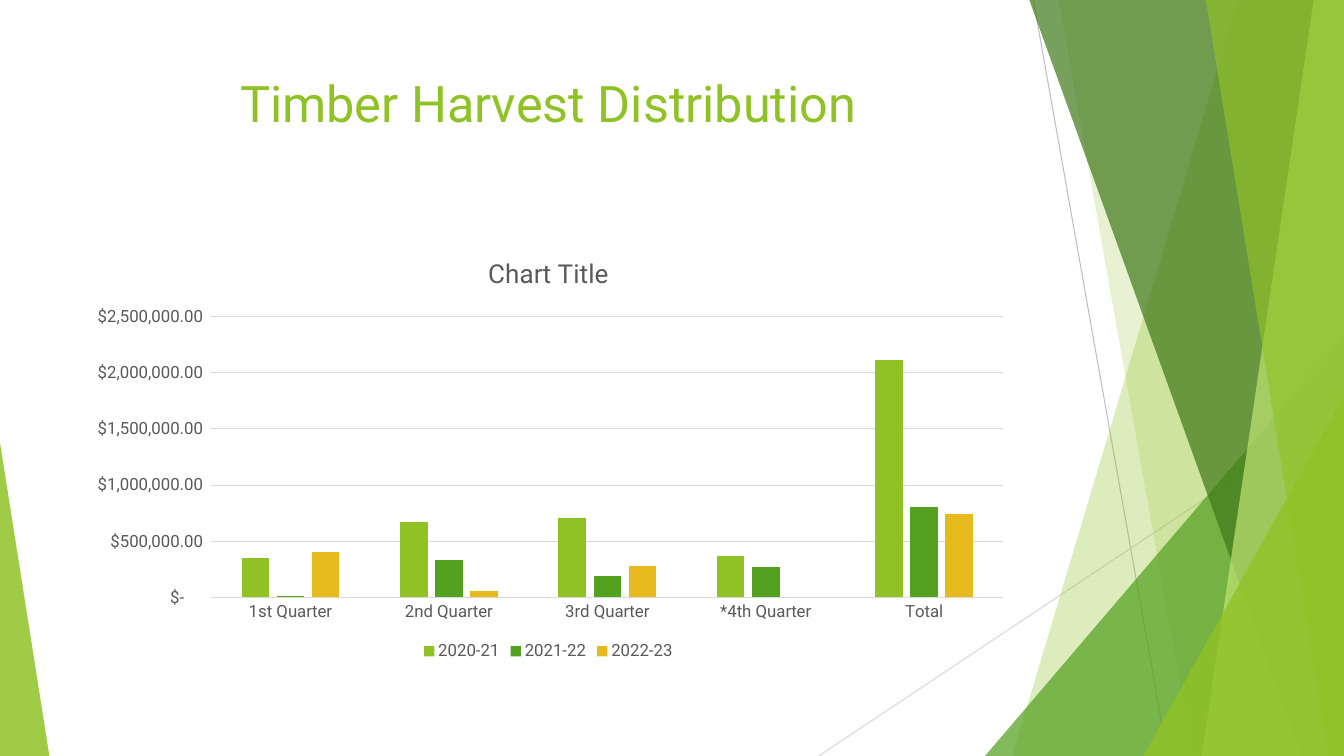
from collections import namedtuple

from lxml import etree
from pptx import Presentation
from pptx.chart.data import CategoryChartData
from pptx.dml.color import RGBColor
from pptx.enum.chart import XL_CHART_TYPE, XL_LEGEND_POSITION, XL_TICK_MARK
from pptx.enum.shapes import MSO_CONNECTOR, MSO_SHAPE
from pptx.enum.text import MSO_ANCHOR, PP_ALIGN
from pptx.oxml.ns import qn
from pptx.util import Inches, Pt

COLUMN_CHART = XL_CHART_TYPE.COLUMN_CLUSTERED
LEGEND_BOTTOM = XL_LEGEND_POSITION.BOTTOM
NO_TICK = XL_TICK_MARK.NONE
STRAIGHT = MSO_CONNECTOR.STRAIGHT
RIGHT_TRIANGLE = MSO_SHAPE.ISOSCELES_TRIANGLE
TOP = MSO_ANCHOR.TOP
CENTER = PP_ALIGN.CENTER

FONT = "Roboto"
COLORS = {
    "lime": "90C226",
    "green": "54A021",
    "gold": "E6B91E",
    "forest": "3F7819",
    "pale": "C0E474",
    "text": "595959",
    "grid": "D9D9D9",
    "ray": "BFBFBF",
}
DOLLARS = '_("$"* #,##0.00_);_("$"* \\(#,##0.00\\);_("$"* "-"??_);_(@_)'
QUARTERS = ["1st Quarter", "2nd Quarter", "3rd Quarter", "*4th Quarter", "Total"]
HARVESTS = [
    ("2020-21", "lime", [350000, 670000, 710000, 370000, 2110000]),
    ("2021-22", "green", [10000, 330000, 190000, 270000, 800000]),
    ("2022-23", "gold", [400000, 60000, 280000, None, 740000]),
]

Box = namedtuple("Box", "left top width height")


def color(name):
    return RGBColor.from_string(COLORS[name])


def point(box, across, down):
    return (
        int(box.left + box.width * across / 100),
        int(box.top + box.height * down / 100),
    )


def region(box, left, top, width, height):
    return Box(*point(box, left, top), *point(Box(0, 0, *box[2:]), width, height))


def paint(shape, name, opacity):
    shape.shadow.inherit = False
    shape.line.fill.background()
    shape.fill.solid()
    shape.fill.fore_color.rgb = color(name)
    tint = shape.fill._xPr.find(qn("a:solidFill"))[0]
    etree.SubElement(tint, qn("a:alpha")).set("val", str(opacity * 1000))


def add_ray(slide, box, start, end, name):
    ray = slide.shapes.add_connector(STRAIGHT, *point(box, *start), *point(box, *end))
    ray.line.color.rgb = color(name)
    ray.line.width = Pt(0.75)
    etree.SubElement(ray._element.spPr, qn("a:effectLst"))


def add_blade(slide, box, top_edge, bottom_edge, name, opacity):
    builder = slide.shapes.build_freeform(*point(box, top_edge, 0))
    corners = [(100, 0), (100, 100), (bottom_edge, 100)]
    builder.add_line_segments([point(box, *corner) for corner in corners])
    paint(builder.convert_to_shape(), name, opacity)


def add_corner(slide, box, left, top, width, peak, name, opacity):
    corner = slide.shapes.add_shape(
        RIGHT_TRIANGLE, *region(box, left, top, width, 100 - top)
    )
    corner.adjustments[0] = peak
    paint(corner, name, opacity)


def add_facets(slide, box):
    add_ray(slide, box, (76.89, 0), (86.87, 100), "ray")
    add_ray(slide, box, (100, 53.73), (60.92, 100), "grid")
    add_blade(slide, box, 92.12, 75.32, "lime", 30)
    add_blade(slide, box, 78.77, 88.75, "lime", 20)
    add_corner(slide, box, 73.29, 44.4, 26.71, 1, "green", 72)
    add_blade(slide, box, 76.59, 96.85, "forest", 70)
    add_blade(slide, box, 97.75, 89.42, "pale", 70)
    add_blade(slide, box, 89.72, 98.87, "lime", 65)
    add_corner(slide, box, 85.07, 52.4, 14.93, 1, "lime", 80)
    add_corner(slide, box, 0, 58.53, 3.68, 0, "lime", 85)


def style_font(font, size, name):
    font.name = FONT
    font.size = Pt(size)
    font.bold = False
    font.color.rgb = color(name)


def add_run(paragraph, text, size, name):
    run = paragraph.add_run()
    run.text = text
    style_font(run.font, size, name)


def add_title(slide, box):
    frame = slide.shapes.add_textbox(*box).text_frame
    frame.word_wrap = True
    frame.vertical_anchor = TOP
    paragraph = frame.paragraphs[0]
    paragraph.alignment = CENTER
    add_run(paragraph, "Timber Harvest Distribution", 36, "lime")


def style_axis(axis):
    axis.major_tick_mark = axis.minor_tick_mark = NO_TICK
    style_font(axis.tick_labels.font, 12, "text")


def style_line(line):
    line.color.rgb = color("grid")
    line.width = Pt(0.75)


def add_harvest_chart(slide, box):
    data = CategoryChartData(number_format=DOLLARS)
    data.categories = QUARTERS
    for year, _, values in HARVESTS:
        data.add_series(year, values)
    chart = slide.shapes.add_chart(COLUMN_CHART, *box, data).chart
    style_font(chart.font, 12, "text")

    chart.has_title = True
    add_run(chart.chart_title.text_frame.paragraphs[0], "Chart Title", 18.6, "text")
    chart.chart_title.include_in_layout = False

    chart.has_legend = True
    chart.legend.position = LEGEND_BOTTOM
    chart.legend.include_in_layout = False
    style_font(chart.legend.font, 12, "text")

    plot = chart.plots[0]
    plot.gap_width = 219
    plot.overlap = -27
    plot.vary_by_categories = False
    for series, (_, name, _) in zip(plot.series, HARVESTS):
        series.format.fill.solid()
        series.format.fill.fore_color.rgb = color(name)
        series.invert_if_negative = False

    style_axis(chart.category_axis)
    style_line(chart.category_axis.format.line)
    amounts = chart.value_axis
    style_axis(amounts)
    amounts.minimum_scale = 0
    amounts.maximum_scale = 2500000
    amounts.major_unit = 500000
    amounts.format.line.fill.background()
    style_line(amounts.major_gridlines.format.line)
    amounts.tick_labels.number_format = DOLLARS
    amounts.tick_labels.number_format_is_linked = False


def main():
    presentation = Presentation()
    presentation.slide_width = Inches(13.33)
    presentation.slide_height = Inches(7.5)
    slide = presentation.slides.add_slide(presentation.slide_layouts[6])
    page = Box(0, 0, presentation.slide_width, presentation.slide_height)
    add_facets(slide, page)
    add_title(slide, region(page, 5.55, 8.93, 70.52, 19.2))
    add_harvest_chart(slide, region(page, 5.55, 31.47, 70.52, 56.53))
    presentation.save("out.pptx")


if __name__ == "__main__":
    main()
